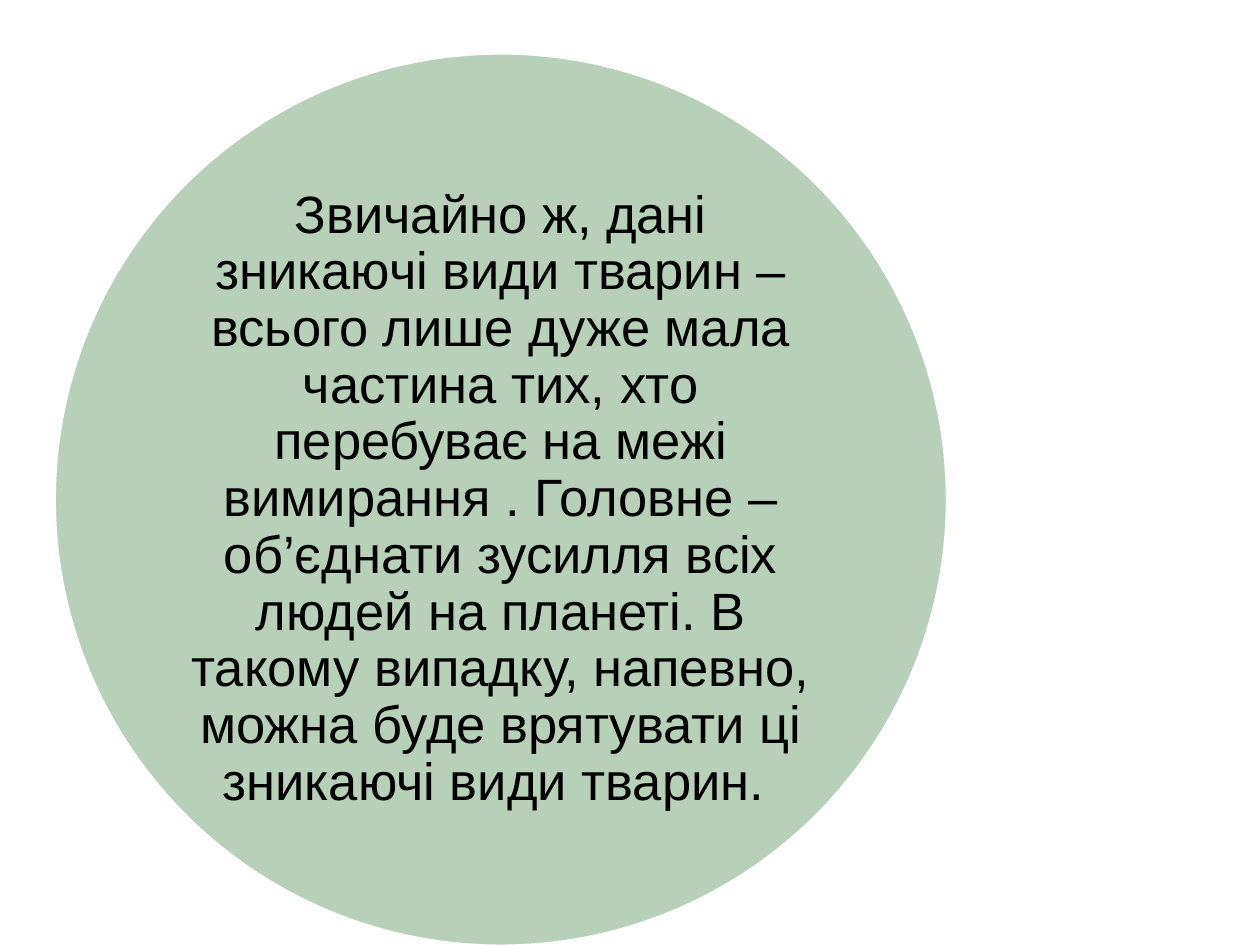
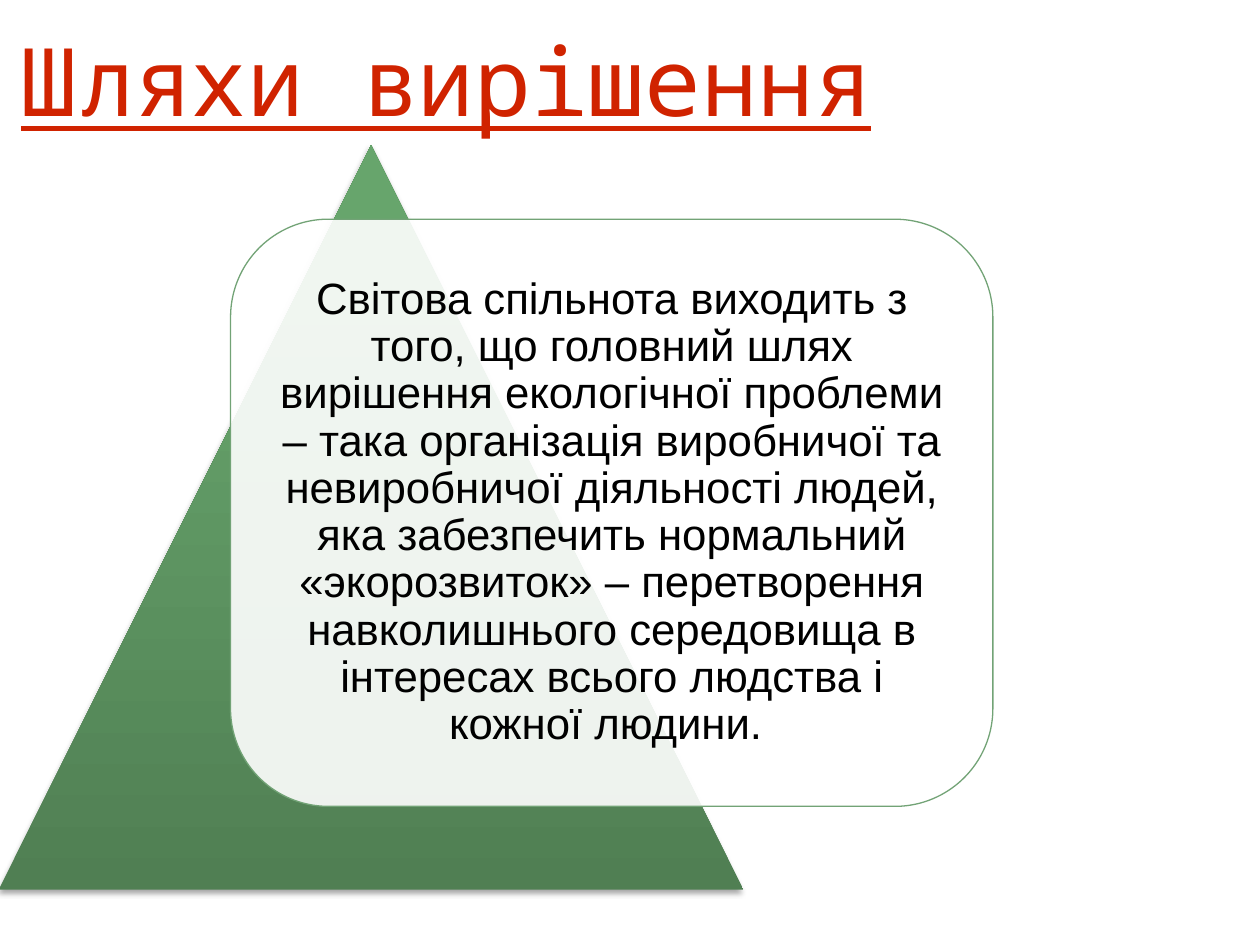
from dataclasses import dataclass

from lxml.etree import SubElement
from pptx import Presentation
from pptx.dml.color import RGBColor
from pptx.enum.shapes import MSO_SHAPE
from pptx.enum.text import MSO_ANCHOR, MSO_AUTO_SIZE, PP_ALIGN
from pptx.oxml.ns import qn
from pptx.presentation import Presentation as Deck
from pptx.shapes.autoshape import Shape
from pptx.slide import Slide
from pptx.util import Inches, Pt


@dataclass(frozen=True)
class Theme:
    green: str = "72A376"
    white: str = "FFFFFF"
    black: str = "000000"
    red: str = "D02300"
    slope: tuple[tuple[int, str], ...] = ((0, "507F53"), (80, "67A56C"), (100, "67A76C"))
    body: str = "Arial"
    head: str = "Noto Sans Mono"
    title: int = 54


@dataclass(frozen=True)
class Box:
    left: float
    top: float
    width: float
    height: float

    def sides(self) -> tuple[int, ...]:
        return tuple(Inches(n) for n in (self.left, self.top, self.width, self.height))


@dataclass(frozen=True)
class Panel:
    kind: MSO_SHAPE
    box: Box
    fill: str
    alpha: int
    line: str
    weight: float
    inset: float
    size: int
    text: str


THEME = Theme()

CIRCLE = Panel(
    MSO_SHAPE.OVAL, Box(0.43, 0.42, 7.09, 7.09), THEME.green, 50, THEME.white, 2, 0, 30,
    "Звичайно ж, дані зникаючі види тварин – всього лише дуже мала частина тих, "
    "хто перебуває на межі вимирання . Головне – об’єднати зусилля всіх людей на планеті. "
    "В такому випадку, напевно, можна буде врятувати ці зникаючі види тварин. ",
)
CARD = Panel(
    MSO_SHAPE.ROUNDED_RECTANGLE, Box(1.83, 1.74, 6.05, 4.66), THEME.white, 90,
    THEME.green, 0.75, 0.1, 25,
    "Світова спільнота виходить з того, що головний шлях вирішення екологічної проблеми "
    "– така організація виробничої та невиробничої діяльності людей, яка забезпечить "
    "нормальний «экорозвиток» – перетворення навколишнього середовища в інтересах "
    "всього людства і кожної людини. ",
)
HEADING = Box(0, 0, 7.08, 1.25)
PEAK = Box(-0.01, 1.15, 5.91, 5.91)


def tint(parent, color: str, alpha: int = 100) -> None:
    node = SubElement(parent, qn("a:srgbClr"), val=color)
    if alpha < 100:
        SubElement(node, qn("a:alpha"), val=str(alpha * 1000))


def write(shape: Shape, text: str, name: str, size: int, color: str) -> None:
    frame = shape.text_frame
    frame.word_wrap = True
    frame.auto_size = MSO_AUTO_SIZE.NONE
    frame.vertical_anchor = MSO_ANCHOR.MIDDLE
    frame.text = text
    para = frame.paragraphs[0]
    para.alignment = PP_ALIGN.CENTER
    para.font.name = name
    para.font.size = Pt(size)
    para.font.color.rgb = RGBColor.from_string(color)


def add_shape(slide: Slide, kind: MSO_SHAPE, box: Box) -> Shape:
    shape = slide.shapes.add_shape(kind, *box.sides())
    shape.shadow.inherit = False
    return shape


def add_panel(slide: Slide, panel: Panel) -> None:
    shape = add_shape(slide, panel.kind, panel.box)
    shape.fill.solid()
    shape.fill.fore_color.rgb = RGBColor.from_string(panel.fill)
    solid = shape._element.spPr.find(qn("a:solidFill"))
    solid.clear()
    tint(solid, panel.fill, panel.alpha)
    shape.line.color.rgb = RGBColor.from_string(panel.line)
    shape.line.width = Pt(panel.weight)
    write(shape, panel.text, THEME.body, panel.size, THEME.black)
    frame = shape.text_frame
    frame.margin_left = frame.margin_right = Inches(panel.inset)
    frame.margin_top = frame.margin_bottom = Inches(panel.inset)
    frame.paragraphs[0].line_spacing = 0.9


def add_title(slide: Slide, text: str) -> None:
    title = slide.shapes.title
    title.left, title.top, title.width, title.height = HEADING.sides()
    write(title, text, THEME.head, THEME.title, THEME.red)
    title.text_frame.paragraphs[0].font.underline = True


def add_peak(slide: Slide) -> None:
    peak = add_shape(slide, MSO_SHAPE.ISOSCELES_TRIANGLE, PEAK)
    peak.line.fill.background()
    peak.fill.gradient()
    peak.fill.gradient_angle = 90
    props = peak._element.spPr
    stops = props.find(f"{qn('a:gradFill')}/{qn('a:gsLst')}")
    stops.clear()
    for place, color in THEME.slope:
        tint(SubElement(stops, qn("a:gs"), pos=str(place * 1000)), color)
    shade = SubElement(
        props.find(qn("a:effectLst")), qn("a:outerShdw"), blurRad=str(Pt(3.1)),
        dist=str(Pt(1.8)), dir=str(90 * 60000), rotWithShape="0",
    )
    tint(shade, THEME.black, 35)


def add_slide(deck: Deck, layout: str) -> Slide:
    return deck.slides.add_slide(deck.slide_layouts.get_by_name(layout))


def main() -> None:
    deck = Presentation()
    deck.slide_width, deck.slide_height = Inches(10), Inches(7.5)
    add_panel(add_slide(deck, "Blank"), CIRCLE)
    ways = add_slide(deck, "Title Only")
    add_title(ways, "Шляхи вирішення")
    add_peak(ways)
    add_panel(ways, CARD)
    deck.save("out.pptx")


if __name__ == "__main__":
    main()
